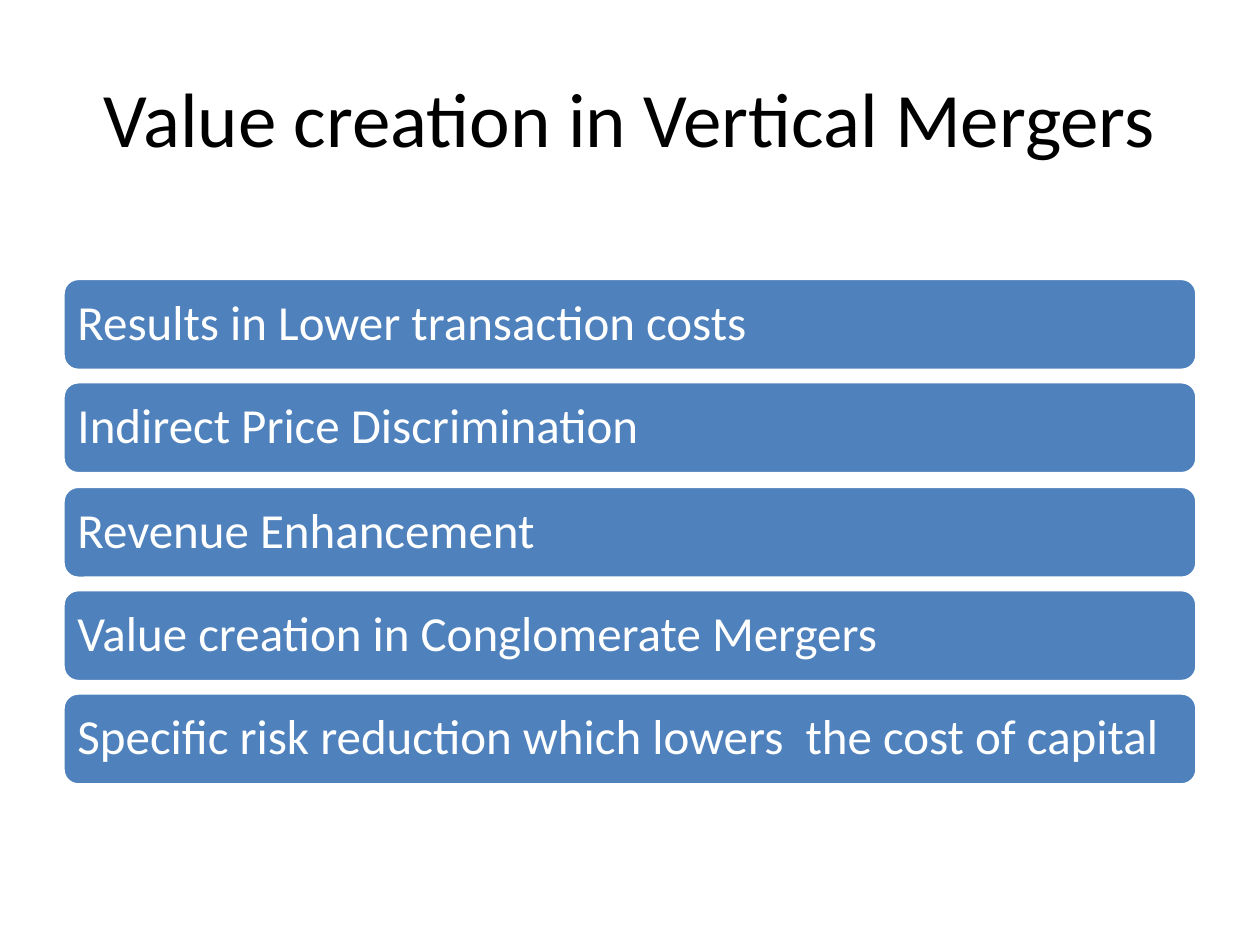
"""Build a title slide with a stack of rounded bars."""
from dataclasses import dataclass

from pptx import Presentation
from pptx.dml.color import RGBColor
from pptx.enum import shapes, text
from pptx.util import Inches, Pt


@dataclass
class Bar:
    label: str
    top: float


LEFT, WIDTH, HEIGHT = 0.5, 9, 0.73
TOP, STEP = 2.21, 0.823
LABELS = [
    "Results in Lower transaction costs",
    "Indirect Price Discrimination",
    "Revenue Enhancement",
    "Value creation in Conglomerate Mergers",
    "Specific risk reduction which lowers  the cost of capital",
]


def color(code: str) -> RGBColor:
    return RGBColor.from_string(code)


def write(shape, words: str, *, size: float, ink: str, align,
          pad: tuple[float, float] = (0.1, 0.05), lead: float = 1.0) -> None:
    frame = shape.text_frame
    frame.word_wrap = True
    frame.auto_size = text.MSO_AUTO_SIZE.NONE
    frame.vertical_anchor = text.MSO_ANCHOR.MIDDLE
    frame.margin_left = frame.margin_right = Inches(pad[0])
    frame.margin_top = frame.margin_bottom = Inches(pad[1])
    para = frame.paragraphs[0]
    para.alignment = align
    para.line_spacing = lead
    run = para.add_run()
    run.text = words
    run.font.name = "Calibri"
    run.font.size = Pt(size)
    run.font.color.rgb = color(ink)


def draw_bar(slide, bar: Bar) -> None:
    shape = slide.shapes.add_shape(
        shapes.MSO_SHAPE.ROUNDED_RECTANGLE,
        Inches(LEFT), Inches(bar.top), Inches(WIDTH), Inches(HEIGHT))
    shape.shadow.inherit = False
    shape.fill.solid()
    shape.fill.fore_color.rgb = color("4F81BD")
    shape.line.color.rgb = color("FFFFFF")
    shape.line.width = Pt(2)
    write(shape, bar.label, size=28, ink="FFFFFF",
          align=text.PP_ALIGN.LEFT, pad=(0.08, 0.08), lead=0.9)


def main() -> None:
    deck = Presentation()
    deck.slide_width, deck.slide_height = Inches(10), Inches(7.5)
    slide = deck.slides.add_slide(deck.slide_layouts[5])
    title = slide.shapes.title
    title.left, title.top = Inches(LEFT), Inches(0.3)
    title.width, title.height = Inches(WIDTH), Inches(1.25)
    write(title, "Value creation in Vertical Mergers", size=44,
          ink="000000", align=text.PP_ALIGN.CENTER)
    for row, label in enumerate(LABELS):
        draw_bar(slide, Bar(label, round(TOP + row * STEP, 2)))
    deck.save("out.pptx")


if __name__ == "__main__":
    main()
